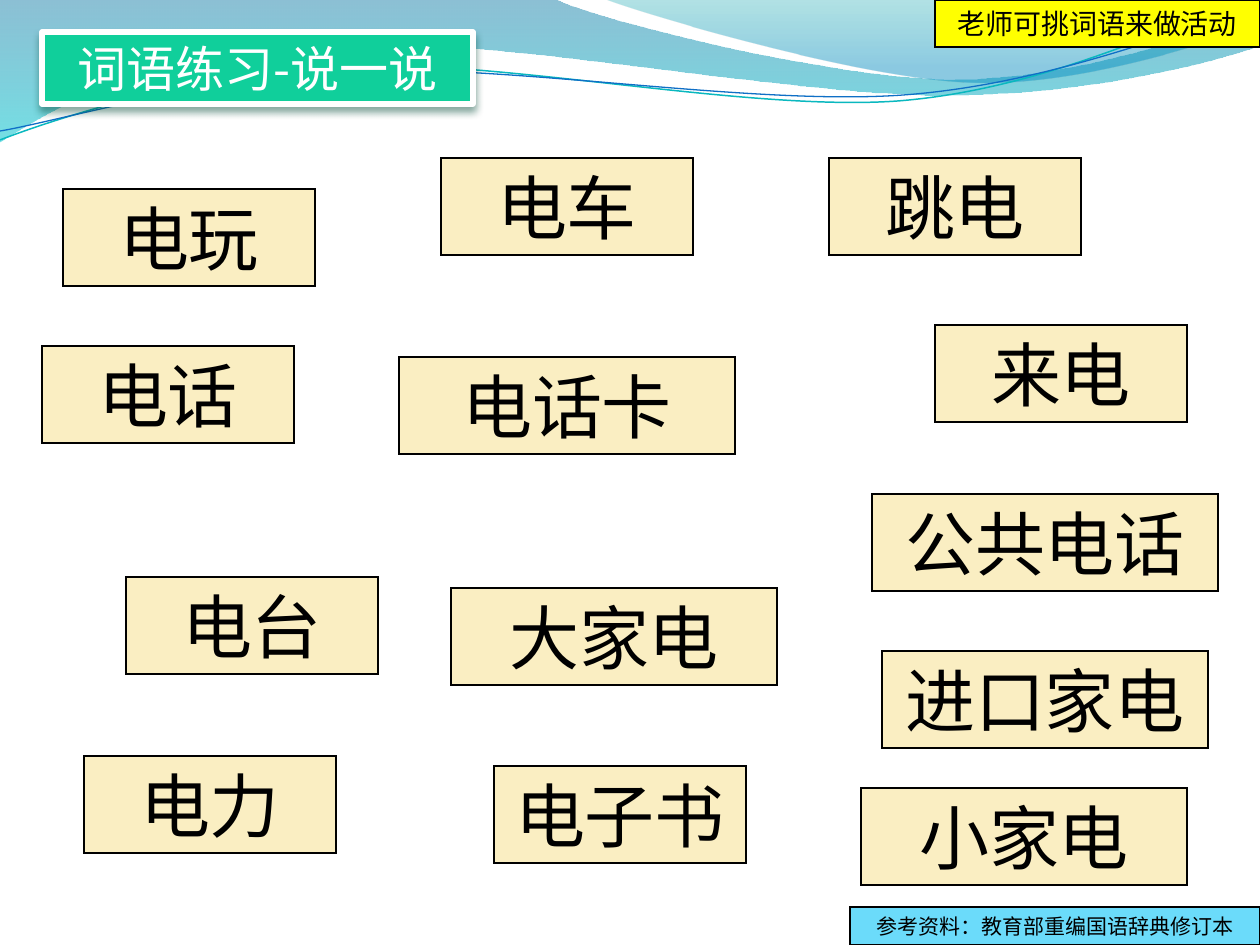
from math import cos, radians, sin

from lxml import etree
from pptx import Presentation
from pptx.dml.color import RGBColor
from pptx.enum.shapes import MSO_SHAPE
from pptx.enum.text import MSO_ANCHOR, MSO_AUTO_SIZE, PP_ALIGN
from pptx.oxml.ns import qn
from pptx.util import Emu, Pt

RECT = MSO_SHAPE.RECTANGLE
TOP = MSO_ANCHOR.TOP
GROW = MSO_AUTO_SIZE.SHAPE_TO_FIT_TEXT
CENTER = PP_ALIGN.CENTER

FONT = "Noto Sans CJK SC"
PX = 914400 / 126
TILT = -2.7
CARD_W, CARD_H = 252, 97

COLORS = {
    "card": "FAEEC2", "title": "10CF9B", "source": "6BDBFA", "tip": "FFFF00",
    "black": "000000", "white": "FFFFFF", "shadow": "044A37",
    "deep": "0074A1", "cyan": "00C6CF", "teal": "00A1A9", "blue": "008BBF",
    "teal_line": "0AB8BF", "blue_line": "0F6FC6",
}

BANDS = [
    {"start": (0, 0),
     "segments": [[(554, -1)],
                  [(600, 21), (837, 79), (955, 79)],
                  [(1075, 79), (1207, 33), (1260, 11)],
                  [(1261, 45)],
                  [(1239, 55), (1096, 96), (940, 95)],
                  [(784, 95), (481, 35), (324, 43)],
                  [(163, 45), (58, 105), (-1, 142)]],
     "stops": [(0, "deep", 45), (1, "cyan", 55)]},
    {"start": (604, -1),
     "segments": [[(641, 14), (859, 78), (969, 82)],
                  [(1079, 87), (1211, 40), (1260, 26)],
                  [(1260, 0)]],
     "stops": [(0, "teal", 30), (0.8, "blue", 45)]},
]
STRANDS = [
    {"start": (0, 140),
     "segments": [[(60, 117), (199, 72), (349, 66)],
                  [(498, 59), (747, 112), (898, 101)],
                  [(1050, 89), (1182, 19), (1257, -3)]],
     "center": (629, 72), "color": "teal_line", "width": 0.85},
    {"start": (0, 131),
     "segments": [[(59, 121), (207, 77), (357, 71)],
                  [(508, 64), (752, 106), (903, 95)],
                  [(1053, 84), (1186, 26), (1260, 8)]],
     "center": (629, 74), "color": "blue_line", "width": 0.75},
]

CARDS = [
    ("电力", 84, 756, CARD_W),
    ("电台", 126, 577, CARD_W),
    ("电子书", 494, 766, CARD_W),
    ("电玩", 63, 189, CARD_W),
    ("跳电", 829, 158, CARD_W),
    ("来电", 935, 325, CARD_W),
    ("电车", 441, 158, CARD_W),
    ("电话", 42, 346, CARD_W),
    ("电话卡", 399, 357, 336),
    ("公共电话", 872, 494, 346),
    ("进口家电", 882, 651, 326),
]
TITLE = ("词语练习-说一说", (42, 32, 431, 72))
LATE_CARDS = [
    ("小家电", 861, 788, 326),
    ("大家电", 451, 588, 326),
]
SOURCE = ("参考资料：教育部重编国语辞典修订本", (850, 907, 410, 38))
TIP = ("老师可挑词语来做活动", (935, 0, 325, 47))


def px(n):
    return Emu(round(n * PX))


def rgb(name):
    return RGBColor.from_string(COLORS[name])


def turn(point, center, degrees):
    a = radians(degrees)
    dx, dy = point[0] - center[0], point[1] - center[1]
    return center[0] + dx * cos(a) - dy * sin(a), center[1] + dx * sin(a) + dy * cos(a)


def add_curve(shapes, start, segments, close):
    fb = shapes.build_freeform(px(start[0]), px(start[1]))
    fb.add_line_segments([tuple(map(px, seg[-1])) for seg in segments], close=close)
    sp = fb.convert_to_shape()
    sp.shadow.inherit = False
    for line, seg in zip(sp._element.xpath(".//a:lnTo"), segments):
        if len(seg) == 3:
            curve = etree.Element(qn("a:cubicBezTo"))
            for x, y in seg:
                etree.SubElement(curve, qn("a:pt"), x=str(px(x) - sp.left), y=str(px(y) - sp.top))
            line.getparent().replace(line, curve)
    return sp


def add_band(shapes, start, segments, stops):
    sp = add_curve(shapes, start, segments, True)
    sp.line.fill.background()
    sp.fill.gradient()
    sp.fill.gradient_angle = 270
    for stop, (pos, color, _) in zip(sp.fill.gradient_stops, stops):
        stop.position, stop.color.rgb = pos, rgb(color)
    for clr, (_, _, alpha) in zip(sp._element.xpath(".//a:gs/a:srgbClr"), stops):
        etree.SubElement(clr, qn("a:alpha"), val=str(alpha * 1000))


def add_strand(shapes, start, segments, center, color, width):
    level = [[turn(pt, center, -TILT) for pt in seg] for seg in segments]
    sp = add_curve(shapes, turn(start, center, -TILT), level, False)
    sp.rotation = TILT
    sp.fill.background()
    sp.line.color.rgb, sp.line.width = rgb(color), Pt(width)


def add_label(shapes, text, box, fill, size, color="black", line="black", width=0.75):
    sp = shapes.add_shape(RECT, *map(px, box))
    sp.shadow.inherit = False
    sp.fill.solid()
    sp.fill.fore_color.rgb = rgb(fill)
    sp.line.color.rgb, sp.line.width = rgb(line), Pt(width)
    tf = sp.text_frame
    for name, value in {"word_wrap": True, "auto_size": GROW, "vertical_anchor": TOP}.items():
        setattr(tf, name, value)
    p = tf.paragraphs[0]
    p.alignment = CENTER
    r = p.add_run()
    r.text = text
    for name, value in {"name": FONT, "size": Pt(size)}.items():
        setattr(r.font, name, value)
    r.font.color.rgb = rgb(color)
    etree.SubElement(r._r.get_or_add_rPr(), qn("a:ea"), typeface=FONT)
    return sp


def add_note(shapes, *label):
    sp = add_label(shapes, *label)
    etree.SubElement(sp.line._get_or_add_ln(), qn("a:miter"), lim="800000")


def add_cards(shapes, cards):
    for text, x, y, w in cards:
        add_note(shapes, text, (x, y, w, CARD_H), "card", 40)


def add_shadow(sp):
    effects = sp._element.spPr.find(qn("a:effectLst"))
    shadow = etree.SubElement(effects, qn("a:outerShdw"), blurRad=str(Pt(4.5)),
                              dist=str(Pt(3)), dir="5400000", rotWithShape="0")
    clr = etree.SubElement(shadow, qn("a:srgbClr"), val=COLORS["shadow"])
    etree.SubElement(clr, qn("a:alpha"), val="48000")


def main():
    prs = Presentation()
    prs.slide_width, prs.slide_height = px(1260), px(945)
    shapes = prs.slides.add_slide(prs.slide_layouts[6]).shapes
    for band in BANDS:
        add_band(shapes, **band)
    for strand in STRANDS:
        add_strand(shapes, **strand)
    add_cards(shapes, CARDS)
    add_shadow(add_label(shapes, *TITLE, "title", 28, "white", "white", 3))
    add_cards(shapes, LATE_CARDS)
    add_note(shapes, *SOURCE, "source", 12)
    add_note(shapes, *TIP, "tip", 16)
    prs.save("out.pptx")


if __name__ == "__main__":
    main()
